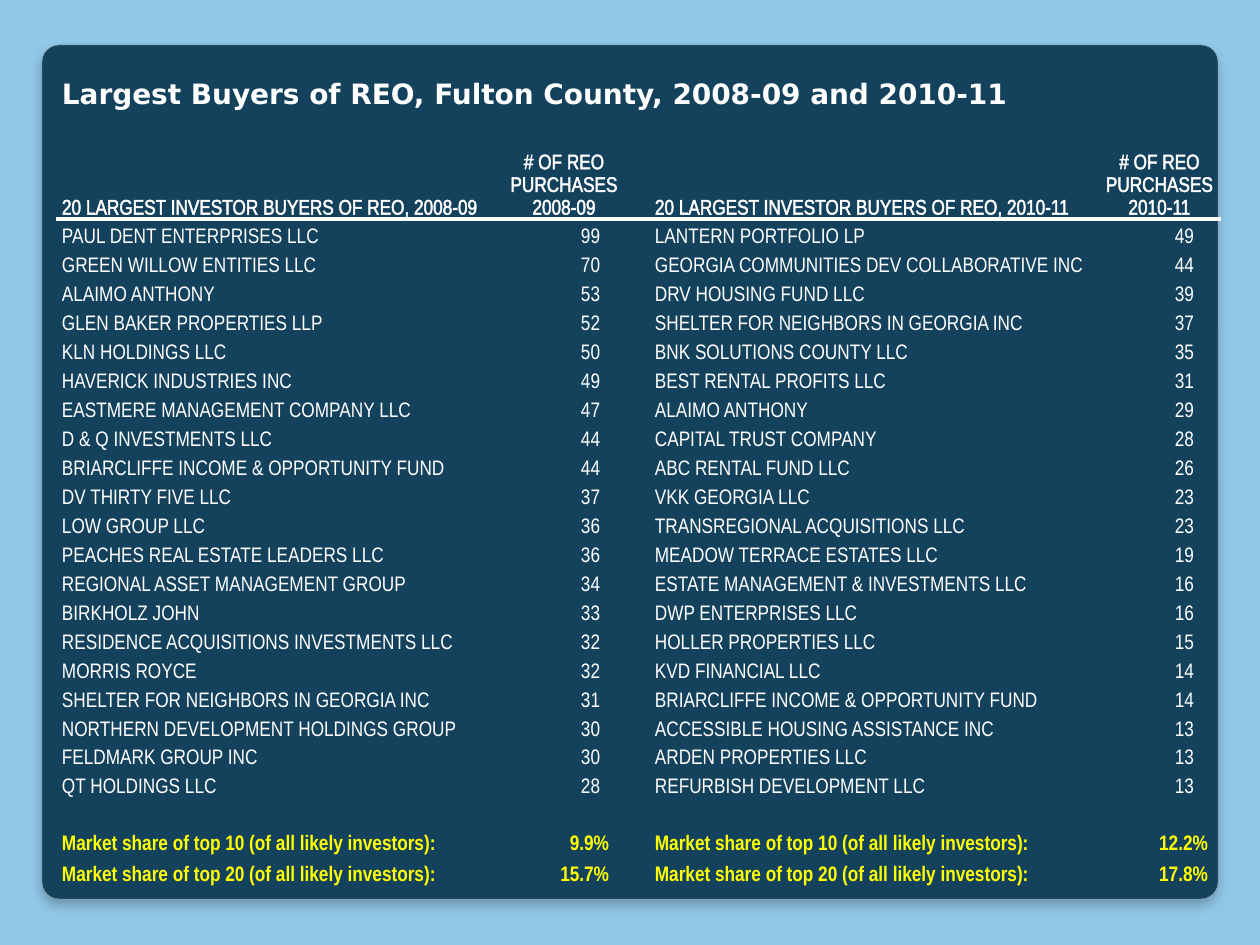
"""Build the slide listing the largest REO buyers in Fulton County."""
from typing import Any, NamedTuple

from lxml import etree
from pptx import Presentation
from pptx import util as u
from pptx.dml.color import RGBColor
from pptx.enum import shapes, text
from pptx.oxml.ns import qn

SKY = RGBColor(0x91, 0xC7, 0xE7)
NAVY = RGBColor(0x14, 0x42, 0x5D)
GREY = RGBColor(0xA4, 0xA4, 0xA4)
WHITE = RGBColor(0xFF, 0xFF, 0xFF)
YELLOW = RGBColor(0xFF, 0xFF, 0x00)
PLAIN = "{2D5ABB26-0587-4C30-8999-92F81FD0307C}"
LEFT, MID, RIGHT = text.PP_ALIGN.LEFT, text.PP_ALIGN.CENTER, text.PP_ALIGN.RIGHT
COLS = (441, 134, 18, 449, 123)
ROWS = (39, 108, *[29] * 20, 26, 31, 31)
TITLE = {"name": "DejaVu Sans", "size": u.Pt(16), "bold": True}
BODY = {"name": "Arial Narrow", "size": u.Pt(12), "bold": False}
SHARE = BODY | {"bold": True}


class Buyer(NamedTuple):
    name: str
    count: int


class Half(NamedTuple):
    col: int
    years: str
    pads: tuple[int, int]
    shares: tuple[str, str]
    buyers: list[Buyer]


HALVES = (
    Half(0, "2008-09", (31, 22), ("9.9%", "15.7%"), [
        Buyer("PAUL DENT ENTERPRISES LLC", 99),
        Buyer("GREEN WILLOW ENTITIES LLC", 70),
        Buyer("ALAIMO ANTHONY", 53),
        Buyer("GLEN BAKER PROPERTIES LLP", 52),
        Buyer("KLN HOLDINGS LLC", 50),
        Buyer("HAVERICK INDUSTRIES INC", 49),
        Buyer("EASTMERE MANAGEMENT COMPANY LLC", 47),
        Buyer("D & Q INVESTMENTS LLC", 44),
        Buyer("BRIARCLIFFE INCOME & OPPORTUNITY FUND", 44),
        Buyer("DV THIRTY FIVE LLC", 37),
        Buyer("LOW GROUP LLC", 36),
        Buyer("PEACHES REAL ESTATE LEADERS LLC", 36),
        Buyer("REGIONAL ASSET MANAGEMENT GROUP", 34),
        Buyer("BIRKHOLZ JOHN", 33),
        Buyer("RESIDENCE ACQUISITIONS INVESTMENTS LLC", 32),
        Buyer("MORRIS ROYCE", 32),
        Buyer("SHELTER FOR NEIGHBORS IN GEORGIA INC", 31),
        Buyer("NORTHERN DEVELOPMENT HOLDINGS GROUP", 30),
        Buyer("FELDMARK GROUP INC", 30),
        Buyer("QT HOLDINGS LLC", 28),
    ]),
    Half(3, "2010-11", (27, 13), ("12.2%", "17.8%"), [
        Buyer("LANTERN PORTFOLIO LP", 49),
        Buyer("GEORGIA COMMUNITIES DEV COLLABORATIVE INC", 44),
        Buyer("DRV HOUSING FUND LLC", 39),
        Buyer("SHELTER FOR NEIGHBORS IN GEORGIA INC", 37),
        Buyer("BNK SOLUTIONS COUNTY LLC", 35),
        Buyer("BEST RENTAL PROFITS LLC", 31),
        Buyer("ALAIMO ANTHONY", 29),
        Buyer("CAPITAL TRUST COMPANY", 28),
        Buyer("ABC RENTAL FUND LLC", 26),
        Buyer("VKK GEORGIA LLC", 23),
        Buyer("TRANSREGIONAL ACQUISITIONS LLC", 23),
        Buyer("MEADOW TERRACE ESTATES LLC", 19),
        Buyer("ESTATE MANAGEMENT & INVESTMENTS LLC", 16),
        Buyer("DWP ENTERPRISES LLC", 16),
        Buyer("HOLLER PROPERTIES LLC", 15),
        Buyer("KVD FINANCIAL LLC", 14),
        Buyer("BRIARCLIFFE INCOME & OPPORTUNITY FUND", 14),
        Buyer("ACCESSIBLE HOUSING ASSISTANCE INC", 13),
        Buyer("ARDEN PROPERTIES LLC", 13),
        Buyer("REFURBISH DEVELOPMENT LLC", 13),
    ]),
)


def px(n: int) -> u.Emu:
    return u.Emu(round(n * 914400 / 126))


def add(node: Any, tag: str, **attrs: Any) -> Any:
    return etree.SubElement(node, qn(tag), {k: str(v) for k, v in attrs.items()})


def stroke(node: Any, tag: str, width: int) -> None:
    line = add(node, tag, w=width)
    add(add(line, "a:solidFill"), "a:srgbClr", val=WHITE)
    node.insert(0, line)


def panel(slide: Any) -> None:
    box = slide.shapes.add_shape(
        shapes.MSO_SHAPE.ROUNDED_RECTANGLE, px(42), px(45), px(1176), px(854))
    box.adjustments[0] = 0.02
    box.fill.solid()
    box.fill.fore_color.rgb = NAVY
    box.line.color.rgb = GREY
    box.line.width = u.Pt(0.16)
    box.shadow.inherit = False
    glow = add(box._element.spPr.find(qn("a:effectLst")), "a:outerShdw",
               blurRad=u.Pt(6), dist=u.Pt(4), dir=5400000, rotWithShape=0)
    add(add(glow, "a:srgbClr", val="000000"), "a:alpha", val=25000)


def write(cell: Any, words: str, form: dict[str, Any], align: Any = LEFT,
          color: RGBColor = WHITE, pad: int = 6) -> Any:
    cell.margin_right = px(pad)
    para = cell.text_frame.paragraphs[0]
    para.alignment, para.line_spacing = align, 1.15
    run = para.add_run()
    run.text = words
    for key, val in form.items():
        setattr(run.font, key, val)
    run.font.color.rgb = color
    return run


def grid(slide: Any) -> Any:
    frame = slide.shapes.add_table(
        len(ROWS), len(COLS), px(56), px(72), px(sum(COLS)), px(sum(ROWS)))
    table = frame.table
    table.first_row = table.horz_banding = False
    table._tbl.tblPr.find(qn("a:tableStyleId")).text = PLAIN
    for col, wide in zip(table.columns, COLS):
        col.width = px(wide)
    for row, high in zip(table.rows, ROWS):
        row.height = px(high)
    for cell in table.iter_cells():
        cell.fill.background()
        cell.vertical_anchor = text.MSO_ANCHOR.BOTTOM
        cell.margin_left = cell.margin_right = px(6)
        cell.margin_top = cell.margin_bottom = 0
    for cell in table.rows[1].cells:
        stroke(cell._tc.tcPr, "a:lnB", u.Pt(3))
    return table


def fill(table: Any, half: Half) -> None:
    name, num = half.col, half.col + 1
    heads = ((name, f"20 LARGEST INVESTOR BUYERS OF REO, {half.years}", LEFT),
             (num, f"# OF REO PURCHASES {half.years}", MID))
    for col, words, align in heads:
        run = write(table.cell(1, col), words, BODY, align)
        stroke(run.font._element, "a:ln", u.Pt(0.75))
    for row, buyer in enumerate(half.buyers, 2):
        write(table.cell(row, name), buyer.name, BODY)
        write(table.cell(row, num), str(buyer.count), BODY, RIGHT, pad=half.pads[0])
    for row, top, share in zip((23, 24), (10, 20), half.shares):
        label = f"Market share of top {top} (of all likely investors):"
        write(table.cell(row, name), label, SHARE, color=YELLOW)
        write(table.cell(row, num), share, SHARE, RIGHT, YELLOW, half.pads[1])


def main() -> None:
    deck = Presentation()
    deck.slide_width, deck.slide_height = px(1260), px(945)
    slide = deck.slides.add_slide(deck.slide_layouts[6])
    slide.background.fill.solid()
    slide.background.fill.fore_color.rgb = SKY
    panel(slide)
    table = grid(slide)
    table.cell(0, 0).merge(table.cell(0, 4))
    write(table.cell(0, 0), "Largest Buyers of REO, Fulton County, 2008-09 and 2010-11", TITLE)
    for half in HALVES:
        fill(table, half)
    for cell in table.iter_cells():
        if not cell.text_frame.text:
            add(cell.text_frame.paragraphs[0]._p, "a:endParaRPr", sz=1200)
    deck.save("out.pptx")


if __name__ == "__main__":
    main()
